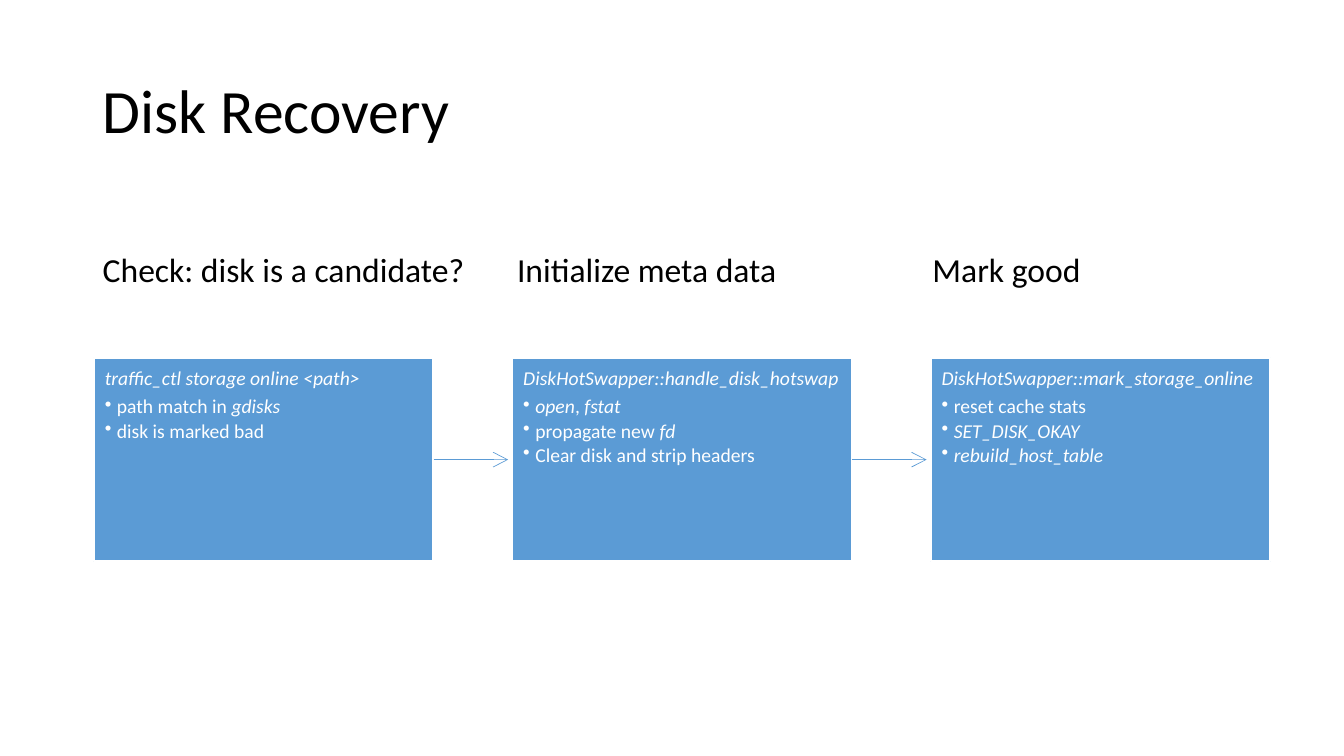
from pptx import Presentation
from pptx.dml.color import RGBColor as RGB
from pptx.enum.shapes import MSO_CONNECTOR as Link, MSO_SHAPE as Kind
from pptx.enum.text import MSO_ANCHOR as Anchor, PP_ALIGN as Align
from pptx.oxml.ns import qn
from pptx.util import Inches, Pt
from lxml.etree import SubElement as Sub

BLUE, WHITE, BLACK = "5B9BD5", "FFFFFF", "000000"
LEFT, TOP, WIDE, HIGH, STEP = 0.93, 3.55, 3.37, 2.02, 4.15

# Heading, heading left and width, call, points; *stars* mark italics
STAGES = [
    ("Check: disk is a candidate?", 0.92, 4.12,
     "*traffic_ctl storage online <path>*",
     ["path match in *gdisks*", "disk is marked bad"]),
    ("Initialize meta data", 5.03, 2.87,
     "*DiskHotSwapper::handle_disk_hotswap*",
     ["*open*, *fstat*", "propagate new *fd*",
      "Clear disk and strip headers"]),
    ("Mark good", 9.15, 1.87,
     "*DiskHotSwapper::mark_storage_online*",
     ["reset cache stats", "*SET_DISK_OKAY*", "*rebuild_host_table*"]),
]


def color(code):
    return RGB.from_string(code)


def style(run, size, code, slant=False):
    font = run.font
    font.name, font.size, font.italic = "Calibri", Pt(size), slant
    font.color.rgb = color(code)


def add_title(slide, text):
    title = slide.shapes.title
    title.left, title.top = Inches(0.92), Inches(0.4)
    title.width, title.height = Inches(11.5), Inches(1.45)
    frame = title.text_frame
    frame.text = text
    frame.vertical_anchor = Anchor.MIDDLE
    para = frame.paragraphs[0]
    para.alignment, para.line_spacing = Align.LEFT, 0.9
    style(para.runs[0], 44, BLACK)


def add_head(slide, text, left, wide):
    box = slide.shapes.add_textbox(
        Inches(left), Inches(2.42), Inches(wide), Inches(0.5))
    frame = box.text_frame
    frame.word_wrap = True
    frame.text = text
    style(frame.paragraphs[0].runs[0], 24, BLACK)


def add_bullet(para):
    props = para._p.get_or_add_pPr()
    props.set("marL", str(Inches(0.12)))
    props.set("indent", str(-Inches(0.12)))
    Sub(props, qn("a:buChar"), char="•")


def fill_para(para, text, after):
    para.alignment, para.line_spacing = Align.LEFT, 0.9
    para.space_after = Pt(after)
    for i, part in enumerate(text.split("*")):
        if part:
            run = para.add_run()
            run.text = part
            style(run, 14, WHITE, i % 2 == 1)


def add_card(slide, left, call, points):
    card = slide.shapes.add_shape(
        Kind.RECTANGLE, Inches(left), Inches(TOP), Inches(WIDE), Inches(HIGH))
    card.shadow.inherit = False
    card.fill.solid()
    card.fill.fore_color.rgb = color(BLUE)
    card.line.color.rgb = color(WHITE)
    card.line.width = Pt(1.5)

    frame = card.text_frame
    frame.word_wrap = True
    frame.vertical_anchor = Anchor.TOP
    frame.margin_left = frame.margin_right = Inches(0.11)
    frame.margin_top = frame.margin_bottom = Inches(0.11)
    fill_para(frame.paragraphs[0], call, 4.9)
    for point in points:
        para = frame.add_paragraph()
        fill_para(para, point, 2.1)
        add_bullet(para)
    return card


def add_arrow(slide, card, end):
    mid = Inches(TOP + HIGH / 2)
    arrow = slide.shapes.add_connector(
        Link.STRAIGHT, card.left + card.width, mid, Inches(end), mid)
    arrow.begin_connect(card, 3)
    arrow.line.color.rgb = color(BLUE)
    arrow.line.width = Pt(0.5)
    Sub(arrow.line._get_or_add_ln(), qn("a:tailEnd"),
        type="arrow", w="lg", len="lg")
    Sub(arrow._element.spPr, qn("a:effectLst"))


def main():
    deck = Presentation()
    deck.slide_width, deck.slide_height = Inches(13.33), Inches(7.5)
    slide = deck.slides.add_slide(deck.slide_layouts[5])
    add_title(slide, "Disk Recovery")

    # Stages, left to right
    for i, (head, start, wide, call, points) in enumerate(STAGES):
        left = LEFT + i * STEP
        add_head(slide, head, start, wide)
        card = add_card(slide, left, call, points)
        if i < len(STAGES) - 1:
            add_arrow(slide, card, left + STEP - 0.04)

    deck.save("out.pptx")


if __name__ == "__main__":
    main()
